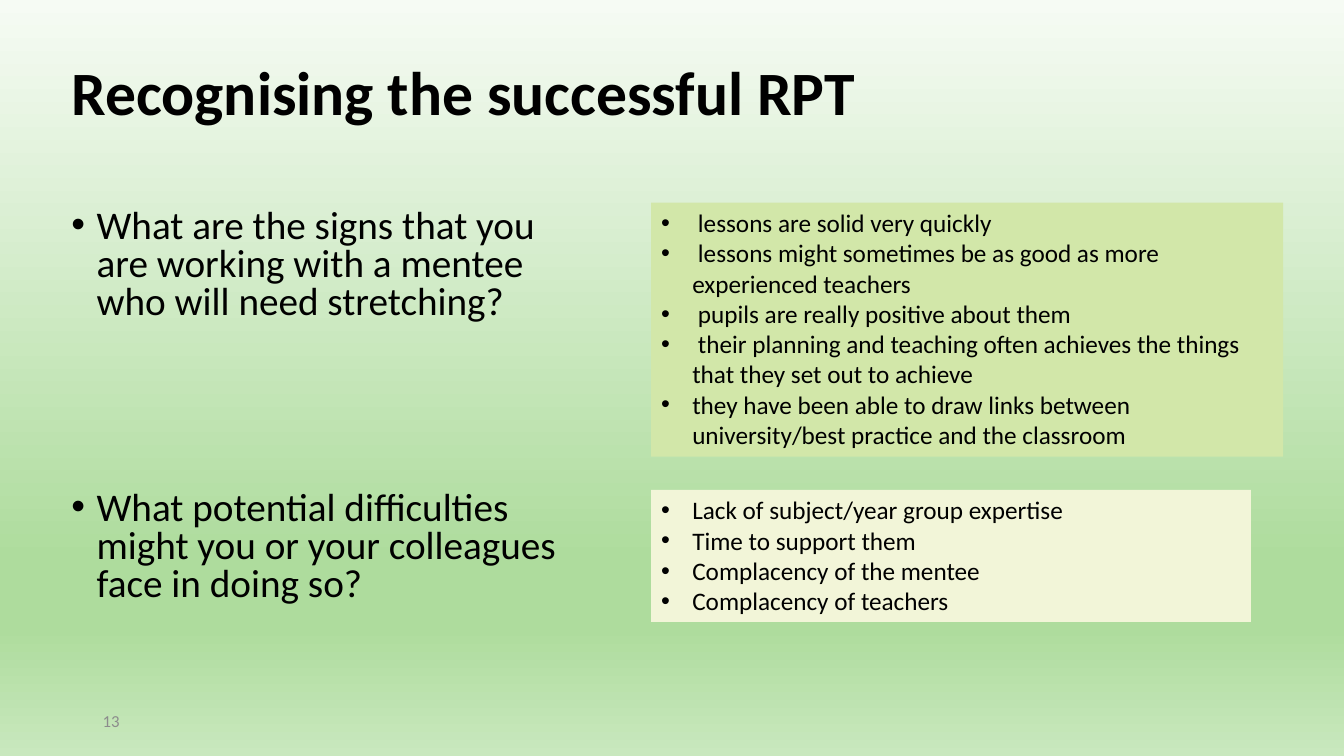
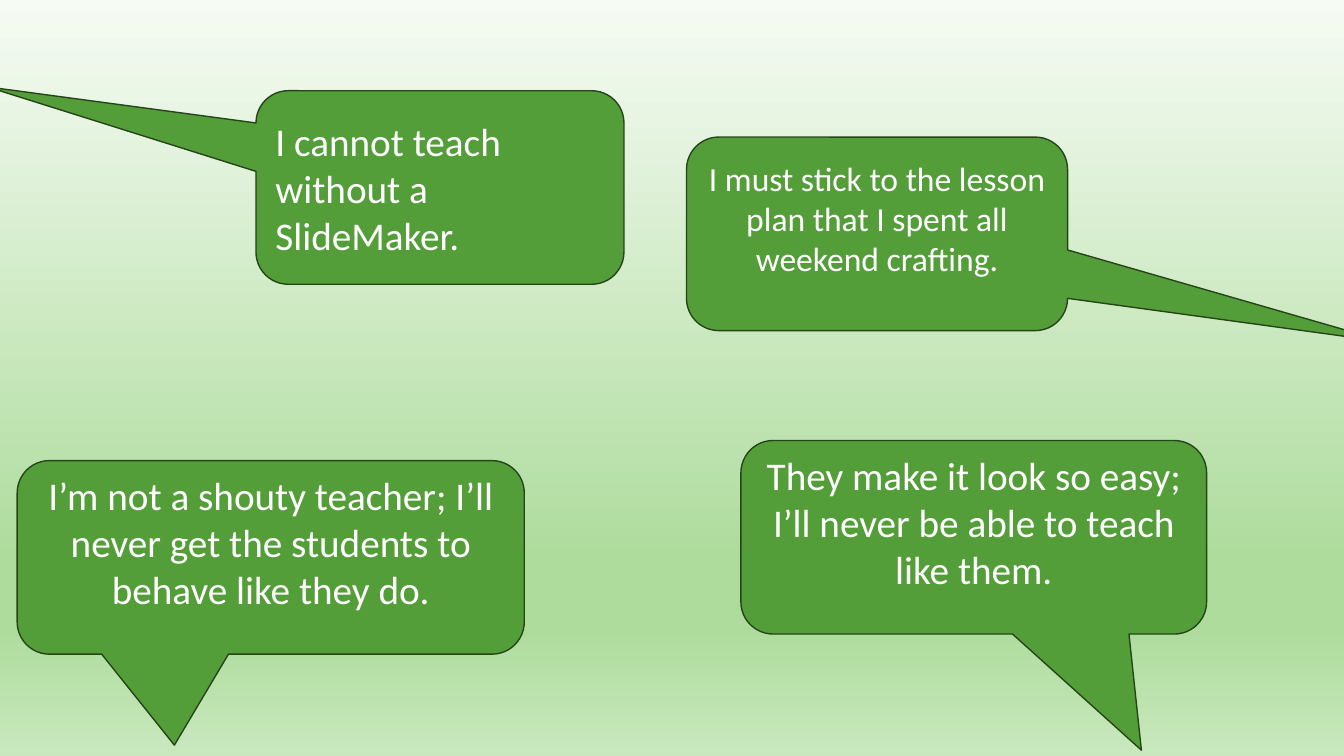
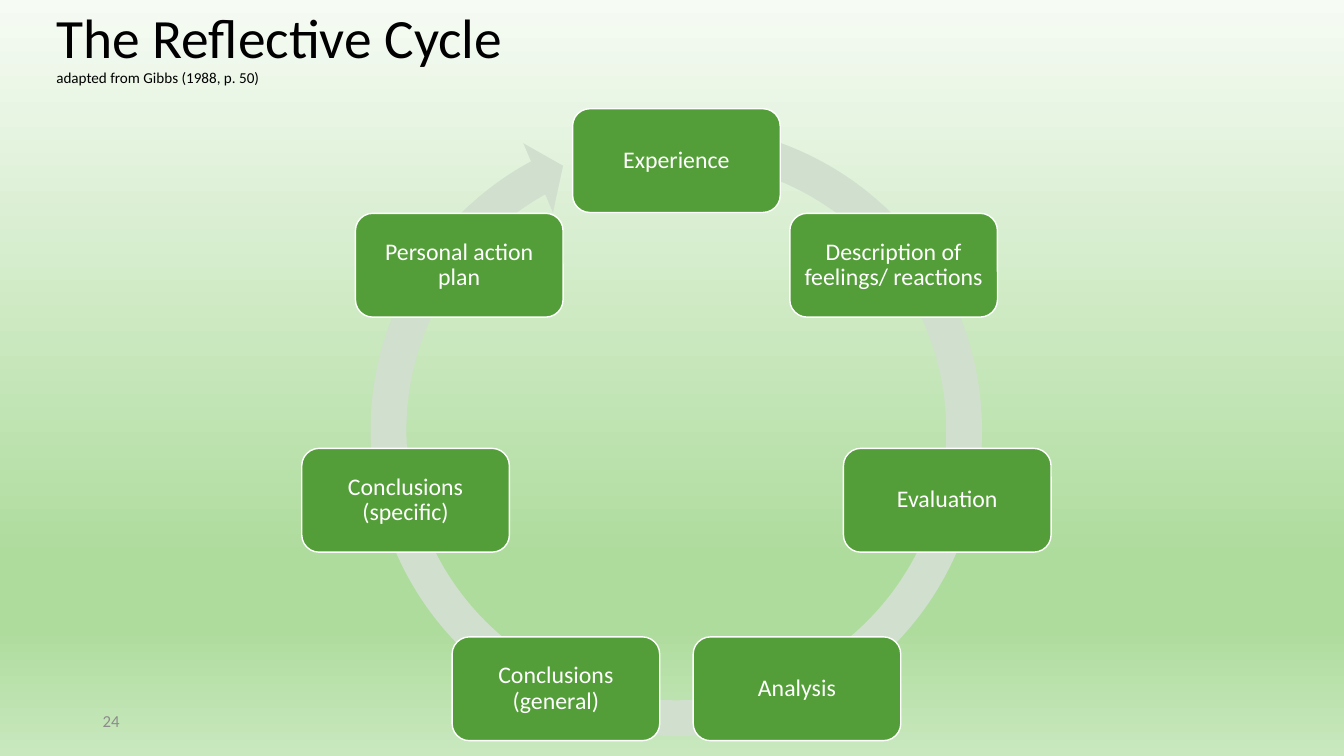
from dataclasses import dataclass
from math import cos, pi, sin

from lxml.etree import SubElement
from pptx import Presentation
from pptx.dml.color import RGBColor
from pptx.enum.shapes import MSO_SHAPE as Kind
from pptx.enum.text import MSO_ANCHOR as Anchor, PP_ALIGN as Align
from pptx.oxml.ns import qn
from pptx.util import Inches, Pt

# Shared look
FONT = "Calibri"
BLACK, WHITE, GREY = "000000", "FFFFFF", "8C8C8C"
GREEN, DARK, RING = "549E39", "254519", "D1DFCE"
LIME, CREAM = "D2E7A9", "F2F5D8"
FADE = [(0, "F6FBF4"), (74, "AEDC9D"), (83, "AEDC9D"), (100, "C9E8BE")]
WIDE, HIGH = Inches(13.33), Inches(7.5)


@dataclass
class Box:
    """Left, top, width and height in percent of the slide."""
    x: float
    y: float
    w: float
    h: float

    def place(self) -> tuple:
        return (round(WIDE * self.x / 100), round(HIGH * self.y / 100),
                round(WIDE * self.w / 100), round(HIGH * self.h / 100))


@dataclass
class Style:
    size: float
    color: str = BLACK
    bold: bool = False
    align: Align = Align.LEFT
    anchor: Anchor = Anchor.MIDDLE
    space: float = 1.0
    dent: float = 0  # hanging bullet indent, inches


@dataclass
class Quote:
    text: str
    box: Box
    tip: tuple
    size: float = 28
    align: Align = Align.CENTER
    foot: float = 0.36  # bottom inset, inches


@dataclass
class Panel:
    ask: str
    box: Box
    fill: str
    notes: list
    top: float  # top of the question


HEAD = Style(44, bold=True, space=0.9)
NAME = Style(39.6, space=0.9)
ASK = Style(28, anchor=Anchor.TOP, space=0.8, dent=0.25)
NOTE = Style(18, anchor=Anchor.TOP, dent=0.31)
PAGE = Style(12, GREY)
STEP = Style(17, WHITE, align=Align.CENTER, space=0.9)


def paint(code: str) -> RGBColor:
    return RGBColor.from_string(code)


def bullet(para, dent: float) -> None:
    props = para._p.get_or_add_pPr()
    props.set("marL", str(Inches(dent)))
    props.set("indent", str(-Inches(dent)))
    SubElement(props, qn("a:buFont"), typeface="Arial")
    SubElement(props, qn("a:buChar"), char="•")


def write(shape, lines: list[str], style: Style) -> None:
    frame = shape.text_frame
    frame.word_wrap = True
    frame.vertical_anchor = style.anchor
    frame.text = "\n".join(lines)
    for para in frame.paragraphs:
        para.alignment = style.align
        para.line_spacing = style.space
        font = para.font
        font.name, font.size, font.bold = FONT, Pt(style.size), style.bold
        font.color.rgb = paint(style.color)
        if style.dent:
            bullet(para, style.dent)


def label(slide, box: Box, lines: list[str], style: Style):
    shape = slide.shapes.add_textbox(*box.place())
    write(shape, lines, style)
    return shape


def block(slide, kind: Kind, box: Box, fill: str, line: str = ""):
    shape = slide.shapes.add_shape(kind, *box.place())
    shape.shadow.inherit = False
    shape.fill.solid()
    shape.fill.fore_color.rgb = paint(fill)
    if line:
        shape.line.color.rgb = paint(line)
        shape.line.width = Pt(1)
    else:
        shape.line.fill.background()
    return shape


def adjust(shape, values: tuple) -> None:
    for i, value in enumerate(values):
        shape.adjustments[i] = value


def number(slide, page: int) -> None:
    label(slide, Box(6.9, 92.67, 22.5, 5.33), [str(page)], PAGE)


def backdrop(master) -> None:
    fill = master.background.fill
    fill.gradient()
    fill.gradient_angle = 270
    stops = master.element.find(".//" + qn("a:gsLst"))
    for stop in list(stops):
        stops.remove(stop)
    for share, code in FADE:
        stop = SubElement(stops, qn("a:gs"), pos=str(share * 1000))
        SubElement(stop, qn("a:srgbClr"), val=code)


# Slide content
PANELS = [
    Panel("What are the signs that you are working with a mentee who will need stretching?",
          Box(48.45, 26.8, 47.03, 33.6), LIME,
          [" lessons are solid very quickly",
           " lessons might sometimes be as good as more experienced teachers",
           " pupils are really positive about them",
           " their planning and teaching often achieves the things that they set out to achieve",
           "they have been able to draw links between university/best practice and the classroom"],
          27.07),
    Panel("What potential difficulties might you or your colleagues face in doing so?",
          Box(48.45, 64.8, 44.63, 17.47), CREAM,
          ["Lack of subject/year group expertise", "Time to support them",
           "Complacency of the mentee", "Complacency of teachers"],
          64.4),
]
QUOTES = [
    Quote("I cannot teach without a SlideMaker.", Box(19.05, 12, 27.38, 25.6),
          (-1.23, -0.52), align=Align.LEFT, foot=0.05),
    Quote("I must stick to the lesson plan that I spent all weekend crafting.",
          Box(51.08, 18.13, 28.35, 25.6), (1.34, 0.56), size=24),
    Quote("I’m not a shouty teacher; I’ll never get the students to behave like they do.",
          Box(1.28, 60.93, 37.73, 25.6), (-0.19, 0.97)),
    Quote("They make it look so easy; I’ll never be able to teach like them.",
          Box(55.13, 58.27, 34.65, 25.6), (0.36, 1.1)),
]
STEPS = ["Experience", "Description of feelings/ reactions", "Evaluation", "Analysis",
         "Conclusions (general)", "Conclusions (specific)", "Personal action plan"]


def signs(slide) -> None:
    label(slide, Box(4.58, 6.53, 91.05, 12.13), ["Recognising the successful RPT"], HEAD)
    for panel in PANELS:
        label(slide, Box(4.58, panel.top, 38.4, 18.67), [panel.ask], ASK)
        write(block(slide, Kind.RECTANGLE, panel.box, panel.fill), panel.notes, NOTE)
    number(slide, 13)


def voices(slide) -> None:
    for quote in QUOTES:
        shape = block(slide, Kind.ROUNDED_RECTANGULAR_CALLOUT, quote.box, GREEN, DARK)
        adjust(shape, quote.tip)
        write(shape, [quote.text], Style(quote.size, WHITE, align=quote.align))
        shape.text_frame.margin_bottom = Inches(quote.foot)


def cycle(slide) -> None:
    title = label(slide, Box(3.45, 0.4, 67.95, 12.13),
                  ["The Reflective Cycle", "adapted from Gibbs (1988, p. 50)"], NAME)
    title.text_frame.paragraphs[1].font.size = Pt(10.8)
    number(slide, 24)
    ring = block(slide, Kind.CIRCULAR_ARROW, Box(26.1, 13.87, 48.45, 86.13), RING)
    adjust(ring, (0.055, 3.307, 144.79, 169.713, 0.058))

    # Steps spaced evenly round the ring, clockwise from the top
    wide, high = 15.45, 13.73
    for i, step in enumerate(STEPS):
        turn = 2 * pi * i / len(STEPS)
        mid, row = 50.33 + 20.67 * sin(turn), 58 - 36.75 * cos(turn)
        box = Box(mid - wide / 2, row - high / 2, wide, high)
        shape = block(slide, Kind.ROUNDED_RECTANGLE, box, GREEN, WHITE)
        write(shape, [step], STEP)
        frame = shape.text_frame
        frame.margin_left = frame.margin_right = Inches(0.07)
        frame.margin_top = frame.margin_bottom = Inches(0.07)


def main() -> None:
    deck = Presentation()
    deck.slide_width, deck.slide_height = WIDE, HIGH
    backdrop(deck.slide_master)
    for draw in (signs, voices, cycle):
        draw(deck.slides.add_slide(deck.slide_layouts[6]))
    deck.save("out.pptx")


if __name__ == "__main__":
    main()
